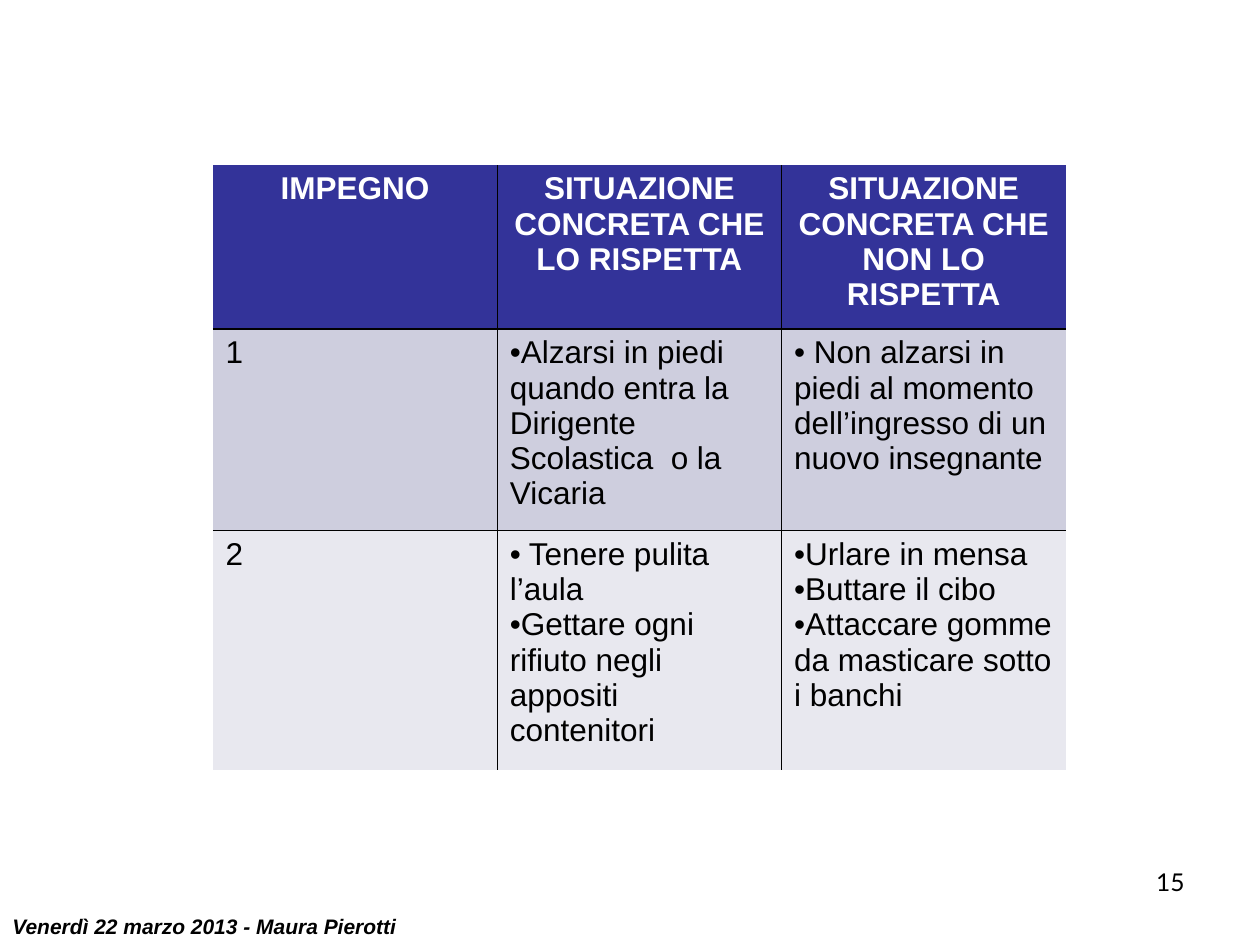
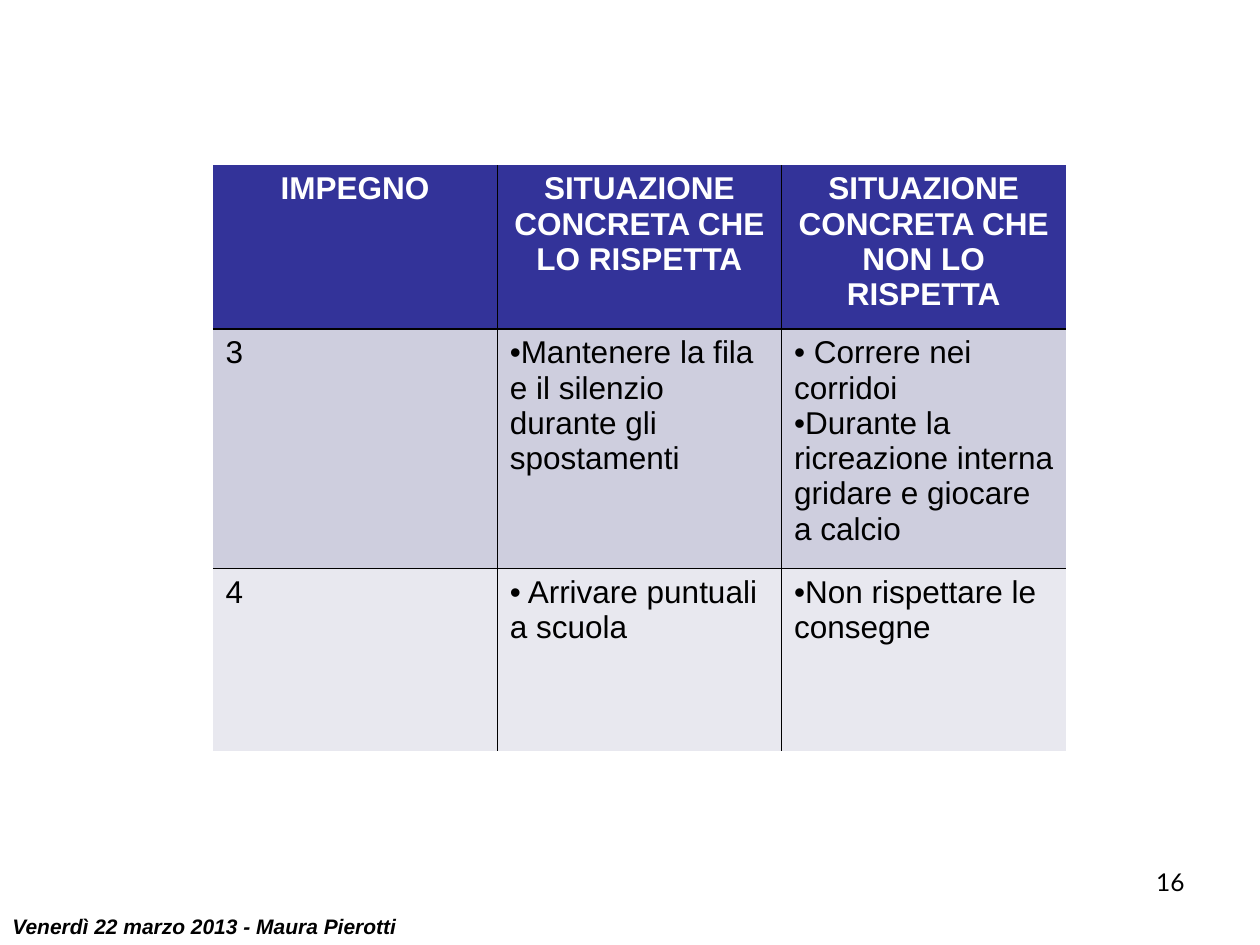
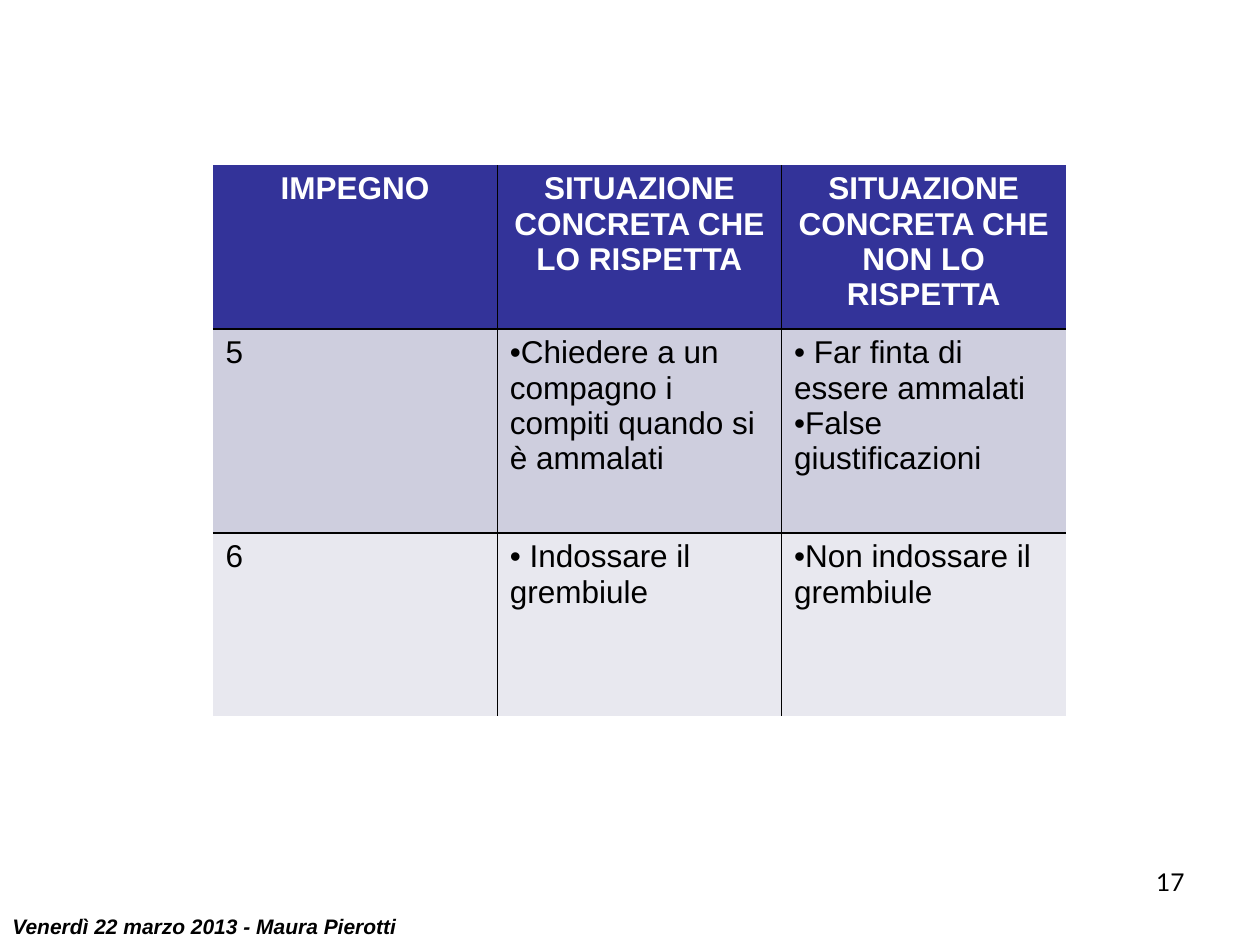
"""Build three slides of school commitments with matching and breaching examples."""
import lxml.etree
import pptx
import pptx.dml.color
import pptx.enum.text
import pptx.oxml.ns
import pptx.util

Pt = pptx.util.Pt
RGBColor = pptx.dml.color.RGBColor
ALIGN = pptx.enum.text.PP_ALIGN
qn = pptx.oxml.ns.qn

BLACK = RGBColor(0x00, 0x00, 0x00)
WHITE = RGBColor(0xFF, 0xFF, 0xFF)
NAVY = RGBColor(0x33, 0x33, 0x99)
LILAC = RGBColor(0xCE, 0xCE, 0xDE)
PALE_LILAC = RGBColor(0xE8, 0xE8, 0xEF)
ROW_FILLS = (NAVY, LILAC, PALE_LILAC)

FIRST_PAGE = 15
FOOTER = "Venerdì 22 marzo 2013 - Maura Pierotti"
HEADINGS = (
    "IMPEGNO",
    "SITUAZIONE CONCRETA CHE LO RISPETTA",
    "SITUAZIONE CONCRETA CHE NON LO RISPETTA",
)
COMMITMENT_SLIDES = [
    {
        "row_heights": (90.7, 111.6, 132.5),
        "rows": [
            (
                "1",
                ["Alzarsi in piedi quando entra la Dirigente Scolastica  o la Vicaria"],
                [" Non alzarsi in piedi al momento dell’ingresso di un nuovo insegnante"],
            ),
            (
                "2",
                [" Tenere pulita l’aula", "Gettare ogni rifiuto negli appositi contenitori"],
                ["Urlare in mensa", "Buttare il cibo", "Attaccare gomme da masticare sotto i banchi"],
            ),
        ],
    },
    {
        "row_heights": (87.5, 128.5, 104.4),
        "rows": [
            (
                "3",
                ["Mantenere la fila e il silenzio durante gli spostamenti"],
                [" Correre nei corridoi", "Durante la ricreazione interna gridare e giocare a calcio"],
            ),
            ("4", [" Arrivare puntuali a scuola"], ["Non rispettare le consegne"]),
        ],
    },
    {
        "row_heights": (87.5, 116.6, 104.4),
        "rows": [
            (
                "5",
                ["Chiedere a un compagno i compiti quando si è ammalati"],
                [" Far finta di essere ammalati", "False giustificazioni"],
            ),
            ("6", [" Indossare il grembiule"], ["Non indossare il grembiule"]),
        ],
    },
]

TABLE_LEFT, TABLE_TOP, TABLE_WIDTH = 121.7, 94.3, 487.4
PAGE_NUMBER_BOX = (516.2, 491.8, 167.8, 37.4)
FOOTER_BOX = (0, 518.4, 258.5, 21.6)


def set_font(paragraph, size, color, name="Arial", bold=False, italic=False):
    font = paragraph.font
    font.name, font.size, font.bold, font.italic = name, Pt(size), bold, italic
    font.color.rgb = color


def add_text(slide, box, text, size, align=ALIGN.LEFT, **style):
    frame = slide.shapes.add_textbox(*map(Pt, box)).text_frame
    frame.word_wrap = True
    paragraph = frame.paragraphs[0]
    paragraph.text = text
    paragraph.alignment = align
    set_font(paragraph, size, BLACK, **style)


def add_bullet(paragraph):
    properties = paragraph._p.get_or_add_pPr()
    properties.set("marL", "0")
    properties.set("indent", "0")
    lxml.etree.SubElement(properties, qn("a:buFont")).set("typeface", "Arial")
    lxml.etree.SubElement(properties, qn("a:buChar")).set("char", "•")


def set_borders(cell, visible_sides):
    properties = cell._tc.get_or_add_tcPr()
    for side, visible in visible_sides.items():
        line = lxml.etree.SubElement(properties, qn(f"a:ln{side}"))
        if visible:
            line.set("w", str(Pt(1)))
            fill = lxml.etree.SubElement(line, qn("a:solidFill"))
            lxml.etree.SubElement(fill, qn("a:srgbClr")).set("val", str(BLACK))
        else:
            lxml.etree.SubElement(line, qn("a:noFill"))


def fill_cell(cell, content, is_header):
    has_bullets = isinstance(content, list)
    lines = content if has_bullets else [content]
    cell.text = "\n".join(lines)
    for paragraph in cell.text_frame.paragraphs:
        if has_bullets:
            add_bullet(paragraph)
        if is_header:
            paragraph.alignment = ALIGN.CENTER
        set_font(paragraph, 18, WHITE if is_header else BLACK, bold=is_header)


def add_commitment_table(slide, row_heights, rows):
    contents = [HEADINGS, *rows]
    last_row, last_column = len(contents) - 1, len(HEADINGS) - 1
    table = slide.shapes.add_table(
        len(contents), len(HEADINGS),
        Pt(TABLE_LEFT), Pt(TABLE_TOP), Pt(TABLE_WIDTH), Pt(sum(row_heights)),
    ).table
    for row, height in zip(table.rows, row_heights):
        row.height = Pt(height)
    for row_index, row_contents in enumerate(contents):
        for column_index, content in enumerate(row_contents):
            cell = table.cell(row_index, column_index)
            set_borders(cell, {
                "L": column_index > 0,
                "R": column_index < last_column,
                "T": row_index > 0,
                "B": row_index < last_row,
            })
            cell.fill.solid()
            cell.fill.fore_color.rgb = ROW_FILLS[row_index]
            fill_cell(cell, content, row_index == 0)


def main():
    presentation = pptx.Presentation()
    presentation.slide_width, presentation.slide_height = Pt(720), Pt(540)
    blank_layout = presentation.slide_layouts[6]
    for page, commitments in enumerate(COMMITMENT_SLIDES, FIRST_PAGE):
        slide = presentation.slides.add_slide(blank_layout)
        add_text(slide, PAGE_NUMBER_BOX, str(page), 14, ALIGN.RIGHT, name="Lato")
        add_commitment_table(slide, **commitments)
        add_text(slide, FOOTER_BOX, FOOTER, 12, bold=True, italic=True)
    presentation.save("out.pptx")


if __name__ == "__main__":
    main()
